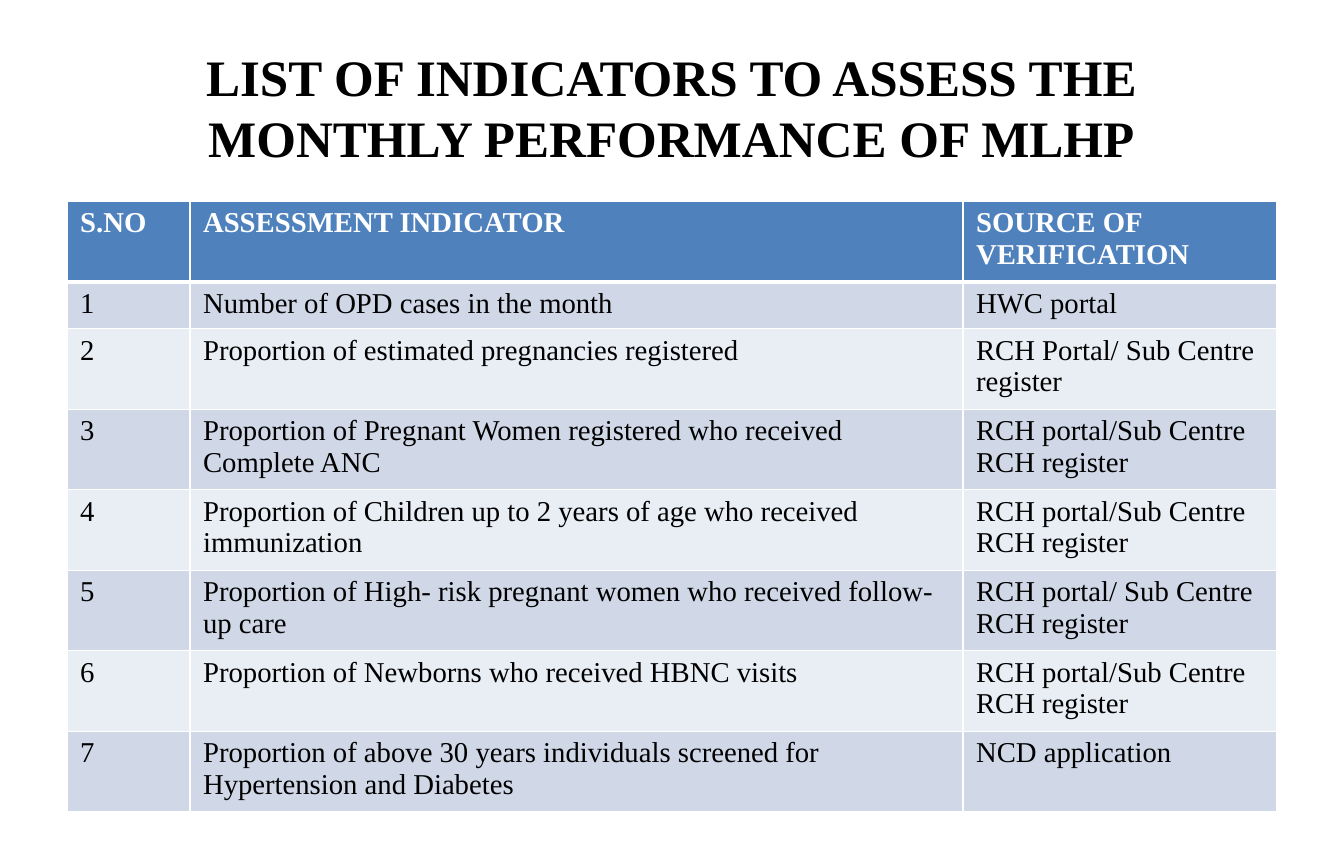
from dataclasses import dataclass

from lxml.etree import SubElement
from pptx import Presentation
from pptx.dml.color import RGBColor
from pptx.enum.text import MSO_ANCHOR, PP_ALIGN
from pptx.oxml.ns import qn
from pptx.util import Pt


@dataclass(frozen=True)
class Theme:
    font: str = "Times New Roman"
    title_size: float = 32
    table_size: float = 18
    ink: str = "000000"
    paper: str = "FFFFFF"
    header: str = "4F81BD"
    bands: tuple = ("D0D8E8", "E9EDF4")
    rule: float = 1
    header_rule: float = 3


THEME = Theme()
SLIDE_SIZE = (842.4, 540)
TITLE_BOX = (42, 21.6, 758, 90)
TABLE_BOX = (42, 126, 758, 358)
COLUMN_WIDTHS = (77, 484.5, 196.5)
ROW_HEIGHTS = (46.5, 29.5) + (47,) * 6
INSET_X, INSET_Y = 8.3, 3.6

TITLE = "LIST OF INDICATORS TO ASSESS THE MONTHLY PERFORMANCE OF MLHP"
HEADINGS = ("S.NO", "ASSESSMENT INDICATOR", "SOURCE OF VERIFICATION")
INDICATORS = (
    ("Number of OPD cases in the month", "HWC portal"),
    ("Proportion of estimated pregnancies registered",
     "RCH Portal/ Sub Centre register"),
    ("Proportion of Pregnant Women registered who received Complete ANC",
     "RCH portal/Sub Centre RCH register"),
    ("Proportion of Children up to 2 years of age who received immunization",
     "RCH portal/Sub Centre RCH register"),
    ("Proportion of High- risk pregnant women who received follow-up care",
     "RCH portal/ Sub Centre RCH register"),
    ("Proportion of Newborns who received HBNC visits",
     "RCH portal/Sub Centre RCH register"),
    ("Proportion of above 30 years individuals screened for "
     "Hypertension and Diabetes", "NCD application"),
)


def write(frame, text, size, color, bold):
    frame.text = text
    font = frame.paragraphs[0].runs[0].font
    font.name, font.size, font.bold = THEME.font, Pt(size), bold
    font.color.rgb = RGBColor.from_string(color)


def add_border(cell, side, width):
    """Append one cell border; borders must precede the cell's fill."""
    border = SubElement(cell._tc.get_or_add_tcPr(), qn(f"a:ln{side}"),
                        w=str(Pt(width)))
    fill = SubElement(border, qn("a:solidFill"))
    SubElement(fill, qn("a:srgbClr"), val=THEME.paper)


def style_cell(cell, text, row):
    is_header = row == 0
    cell.margin_left = cell.margin_right = Pt(INSET_X)
    cell.margin_top = cell.margin_bottom = Pt(INSET_Y)
    rules = {side: THEME.rule for side in "LRTB"}
    if is_header:
        rules["B"] = THEME.header_rule
    elif row == 1:
        rules["T"] = THEME.header_rule
    for side, width in rules.items():
        add_border(cell, side, width)
    cell.fill.solid()
    cell.fill.fore_color.rgb = RGBColor.from_string(
        THEME.header if is_header else THEME.bands[(row - 1) % 2])
    write(cell.text_frame, text, THEME.table_size,
          THEME.paper if is_header else THEME.ink, is_header)


def add_title(slide, box):
    frame = slide.shapes.add_textbox(*map(Pt, box)).text_frame
    frame.word_wrap = True
    frame.vertical_anchor = MSO_ANCHOR.MIDDLE
    frame.margin_left = frame.margin_right = Pt(INSET_X)
    write(frame, TITLE, THEME.title_size, THEME.ink, True)
    frame.paragraphs[0].alignment = PP_ALIGN.CENTER


def add_indicator_table(slide, box):
    rows = [HEADINGS] + [(str(number), *indicator)
                         for number, indicator in enumerate(INDICATORS, 1)]
    table = slide.shapes.add_table(
        len(rows), len(HEADINGS), *map(Pt, box)).table
    for column, width in zip(table.columns, COLUMN_WIDTHS):
        column.width = Pt(width)
    for row, height in zip(table.rows, ROW_HEIGHTS):
        row.height = Pt(height)
    for r, texts in enumerate(rows):
        for c, text in enumerate(texts):
            style_cell(table.cell(r, c), text, r)


def main():
    presentation = Presentation()
    presentation.slide_width, presentation.slide_height = map(Pt, SLIDE_SIZE)
    slide = presentation.slides.add_slide(presentation.slide_layouts[6])
    add_title(slide, TITLE_BOX)
    add_indicator_table(slide, TABLE_BOX)
    presentation.save("out.pptx")


if __name__ == "__main__":
    main()
